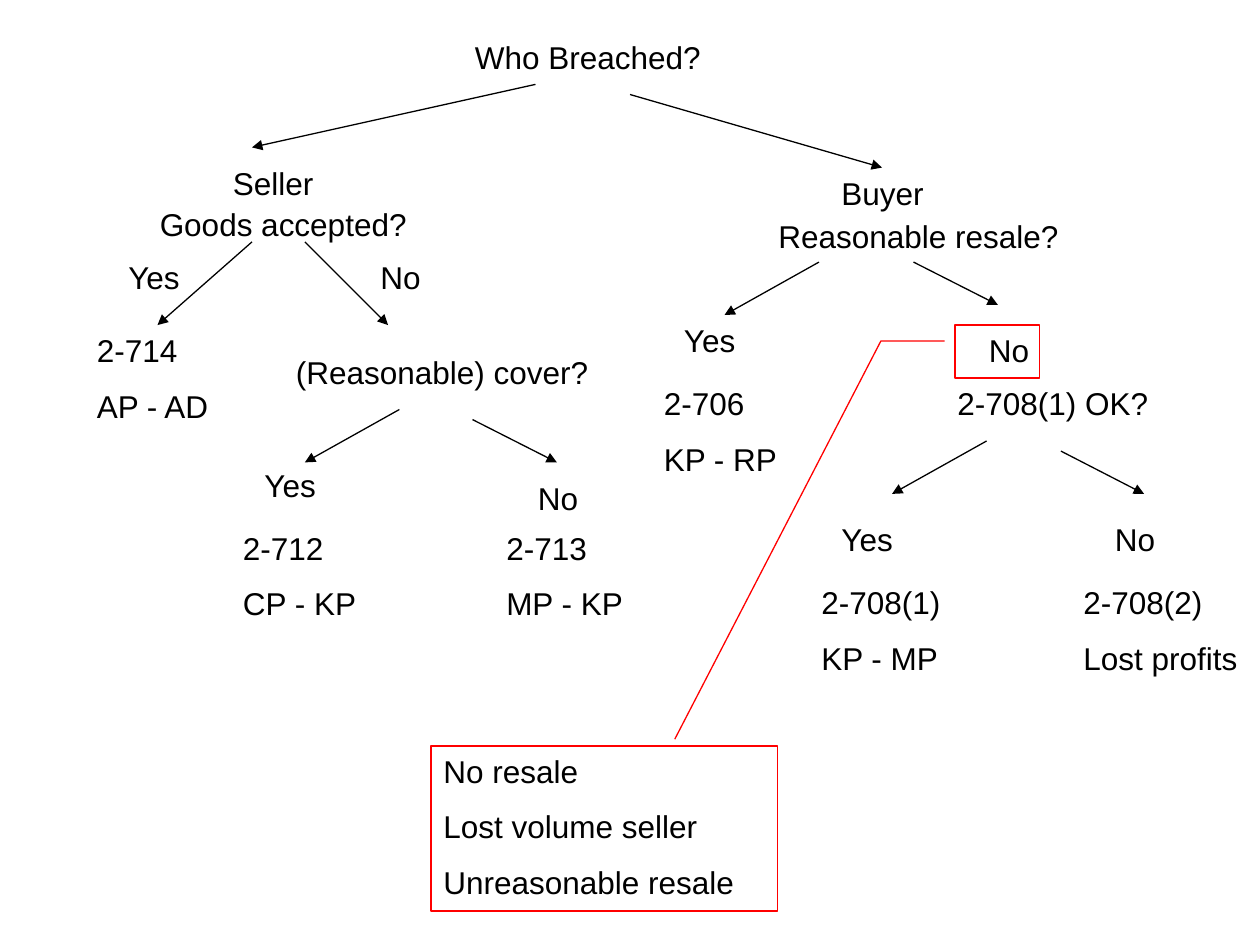
import pptx
import pptx.dml.color
import pptx.enum.shapes
import pptx.enum.text
import pptx.oxml
import pptx.util
from pptx.oxml.ns import nsdecls

Inches, Pt = pptx.util.Inches, pptx.util.Pt
SHAPE = pptx.enum.shapes.MSO_SHAPE
BLACK, RED = "000000", "FF0000"
LINE_HEIGHT, PARAGRAPH_PITCH = 0.4, 0.45

# (left, top, width, lines)
QUESTIONS = [
    (3.67, 0.25, 2.25, ["Who Breached?"]),
    (1.75, 1.25, 1.17, ["Seller"]),
    (1.17, 1.58, 2.17, ["Goods accepted?"]),
    (2.25, 2.75, 2.58, ["(Reasonable) cover?"]),
    (6.58, 1.33, 1.17, ["Buyer"]),
    (6.08, 1.67, 2.83, ["Reasonable resale?"]),
    (7.5, 3, 1.92, ["2-708(1) OK?"]),
]
REMEDIES = [
    (0.67, 2.58, 1.17, ["2-714", "AP - AD"]),
    (1.83, 4.15, 1.17, ["2-712", "CP - KP"]),
    (3.92, 4.15, 1.17, ["2-713", "MP - KP"]),
    (5.17, 3, 1.17, ["2-706", "KP - RP"]),
    (6.42, 4.58, 1.17, ["2-708(1)", "KP - MP"]),
    (8.5, 4.58, 1.5, ["2-708(2)", "Lost profits"]),
]
# answer: (left, top) of each label
ANSWERS = {
    "Yes": [(0.92, 2), (2, 3.65), (5.33, 2.5), (6.58, 4.08)],
    "No": [(2.92, 2), (4.17, 3.75), (7.75, 2.58), (8.75, 4.08)],
}
ANSWER_WIDTH = 0.75
# (from, to)
ARROWS = [
    ((4.25, 0.67), (2, 1.17)), ((5, 0.75), (7, 1.33)),
    ((2, 1.92), (1.25, 2.58)), ((2.42, 1.92), (3.08, 2.58)),
    ((3.17, 3.25), (2.42, 3.67)), ((3.75, 3.33), (4.42, 3.67)),
    ((6.5, 2.08), (5.75, 2.5)), ((7.25, 2.08), (7.92, 2.42)),
    ((7.83, 3.5), (7.08, 3.92)), ((8.42, 3.58), (9.08, 3.92)),
]
NO_RESALE_REASONS = ["No resale", "Lost volume seller", "Unreasonable resale"]
REASONS_BOX = (3.42, 5.92, 2.75, 1.31)
CALLOUT_BOX = (7.58, 2.58, 0.67, 0.42)
# y, x of the leader's start, bend and end, as shares of the callout box
CALLOUT_LEADER = [0.3, -0.125, 0.3, -0.878, 7.825, -3.32]


def rgb(color):
    return pptx.dml.color.RGBColor.from_string(color)


def write(shape, lines):
    frame = shape.text_frame
    frame_format = {
        "word_wrap": True,
        "auto_size": pptx.enum.text.MSO_AUTO_SIZE.SHAPE_TO_FIT_TEXT,
        "vertical_anchor": pptx.enum.text.MSO_ANCHOR.TOP,
    }
    for name, value in frame_format.items():
        setattr(frame, name, value)
    for index, line in enumerate(lines):
        paragraph = frame.add_paragraph() if index else frame.paragraphs[0]
        paragraph.alignment = pptx.enum.text.PP_ALIGN.LEFT
        paragraph.space_before = Pt(10 if index else 0)
        run = paragraph.add_run()
        run.text = line
        for name, value in {"name": "Arial", "size": Pt(18)}.items():
            setattr(run.font, name, value)
        run.font.color.rgb = rgb(BLACK)


def add_text(slide, left, top, width, lines):
    height = LINE_HEIGHT + PARAGRAPH_PITCH * (len(lines) - 1)
    write(slide.shapes.add_textbox(*map(Inches, (left, top, width, height))), lines)


def add_arrow(slide, start, end):
    arrow = slide.shapes.add_connector(
        pptx.enum.shapes.MSO_CONNECTOR.STRAIGHT, *map(Inches, start + end))
    arrow.line.width = Pt(0.75)
    arrow.line.color.rgb = rgb(BLACK)
    arrow.line._get_or_add_ln().append(
        pptx.oxml.parse_xml(f'<a:tailEnd {nsdecls("a")} type="triangle"/>'))
    arrow._element.spPr.append(
        pptx.oxml.parse_xml(f'<a:effectLst {nsdecls("a")}/>'))


def add_red_outline(slide, kind, box):
    shape = slide.shapes.add_shape(kind, *map(Inches, box))
    shape.shadow.inherit = False
    shape.fill.background()
    shape.line.width = Pt(0.75)
    shape.line.color.rgb = rgb(RED)
    return shape


def main():
    deck = pptx.Presentation()
    deck.slide_width, deck.slide_height = Inches(10), Inches(7.5)
    slide = deck.slides.add_slide(deck.slide_layouts[6])

    for start, end in ARROWS:
        add_arrow(slide, start, end)
    for text in QUESTIONS + REMEDIES:
        add_text(slide, *text)
    for answer, places in ANSWERS.items():
        for left, top in places:
            add_text(slide, left, top, ANSWER_WIDTH, [answer])

    callout = add_red_outline(slide, SHAPE.LINE_CALLOUT_2, CALLOUT_BOX)
    for index, share in enumerate(CALLOUT_LEADER):
        callout.adjustments[index] = share
    write(add_red_outline(slide, SHAPE.RECTANGLE, REASONS_BOX), NO_RESALE_REASONS)

    deck.save("out.pptx")


if __name__ == "__main__":
    main()
